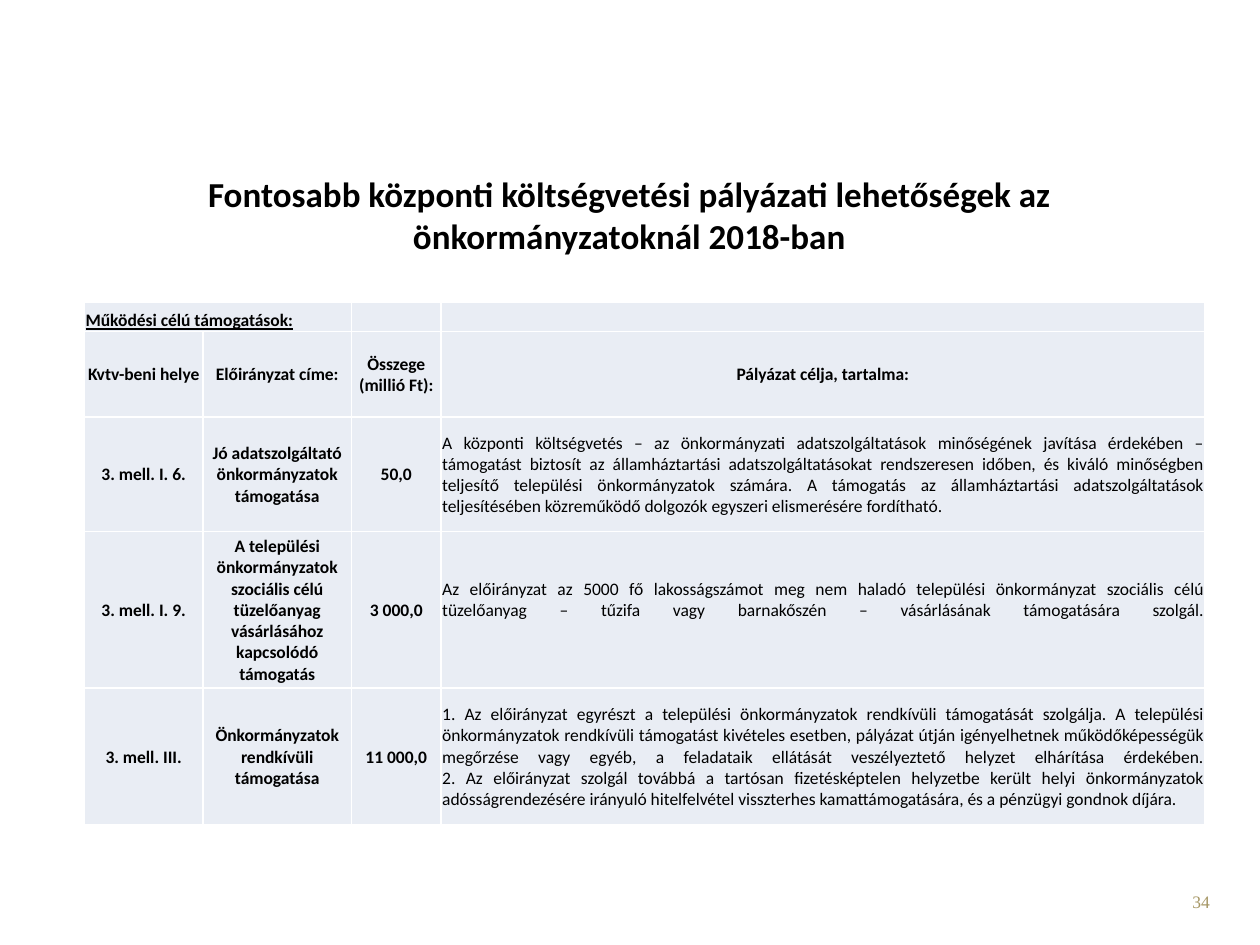
from copy import deepcopy
from typing import NamedTuple

from lxml.etree import SubElement
from pptx import Presentation
from pptx.dml.color import RGBColor
from pptx.enum.text import MSO_ANCHOR as Anchor, PP_ALIGN as Align
from pptx.oxml.ns import qn
from pptx.util import Inches, Pt

BLACK, WHITE, PALE_BLUE, GOLD = "000000", "FFFFFF", "E9EDF4", "A69765"
COLUMN_WIDTHS = [0.94, 1.18, 0.71, 6.06]
ROW_HEIGHTS = [0.23, 0.68, 0.91, 1.24, 1.09]


class Grant(NamedTuple):
    place: str
    title: str
    amount: str
    purpose: str


SECTION = "Működési célú támogatások:"
HEADINGS = Grant("Kvtv-beni helye", "Előirányzat címe:", "Összege (millió Ft):",
                 "Pályázat célja, tartalma:")
GRANTS = [
    Grant("3. mell. I. 6.", "Jó adatszolgáltató önkormányzatok támogatása", "50,0",
          "A központi költségvetés – az önkormányzati adatszolgáltatások minőségének "
          "javítása érdekében – támogatást biztosít az államháztartási "
          "adatszolgáltatásokat rendszeresen időben, és kiváló minőségben teljesítő "
          "települési önkormányzatok számára. A támogatás az államháztartási "
          "adatszolgáltatások teljesítésében közreműködő dolgozók egyszeri "
          "elismerésére fordítható."),
    # The closing line break stretches the last justified line
    Grant("3. mell. I. 9.",
          "A települési önkormányzatok szociális célú tüzelőanyag vásárlásához "
          "kapcsolódó támogatás", "3 000,0",
          "Az előirányzat az 5000 fő lakosságszámot meg nem haladó települési "
          "önkormányzat szociális célú tüzelőanyag – tűzifa vagy barnakőszén – "
          "vásárlásának támogatására szolgál.\n"),
    Grant("3. mell. III.", "Önkormányzatok rendkívüli támogatása", "11 000,0",
          "1. Az előirányzat egyrészt a települési önkormányzatok rendkívüli "
          "támogatását szolgálja. A települési önkormányzatok rendkívüli támogatást "
          "kivételes esetben, pályázat útján igényelhetnek működőképességük "
          "megőrzése vagy egyéb, a feladataik ellátását veszélyeztető helyzet "
          "elhárítása érdekében.\n"
          "2. Az előirányzat szolgál továbbá a tartósan fizetésképtelen helyzetbe "
          "került helyi önkormányzatok adósságrendezésére irányuló hitelfelvétel "
          "visszterhes kamattámogatására, és a pénzügyi gondnok díjára."),
]


def rgb(value: str) -> RGBColor:
    return RGBColor.from_string(value)


def write(frame, text: str, *, size: float = 10, font: str = "Calibri",
          color: str = BLACK, bold: bool = False, underline: bool = False,
          align=Align.LEFT) -> None:
    paragraph = frame.paragraphs[0]
    paragraph.text = text
    paragraph.alignment = align
    for run in paragraph.runs:
        run.font.size, run.font.name = Pt(size), font
        run.font.bold, run.font.underline = bold, underline
        run.font.color.rgb = rgb(color)
    # Line breaks and the paragraph end keep the same text height
    element = paragraph._p
    for line_break in element.findall(qn("a:br")):
        line_break.append(deepcopy(element.find(qn("a:r")).find(qn("a:rPr"))))
    end = SubElement(element, qn("a:endParaRPr"), sz=str(int(size * 100)))
    SubElement(end, qn("a:latin"), typeface=font)


def add_text(slide, left: float, top: float, width: float, height: float,
             text: str, **style) -> None:
    box = slide.shapes.add_textbox(Inches(left), Inches(top),
                                   Inches(width), Inches(height))
    box.text_frame.word_wrap = True
    write(box.text_frame, text, **style)


def style_cell(cell, anchor) -> None:
    cell.margin_left = cell.margin_top = cell.margin_right = Inches(0.01)
    cell.margin_bottom = 0
    cell.vertical_anchor = anchor
    properties = cell._tc.get_or_add_tcPr()
    for side in ("a:lnL", "a:lnR", "a:lnT", "a:lnB"):
        border = SubElement(properties, qn(side), w=str(Pt(1)))
        SubElement(SubElement(border, qn("a:solidFill")), qn("a:srgbClr"), val=WHITE)
    cell.fill.solid()
    cell.fill.fore_color.rgb = rgb(PALE_BLUE)


def add_grant_table(slide) -> None:
    table = slide.shapes.add_table(
        len(ROW_HEIGHTS), len(COLUMN_WIDTHS), Inches(0.67), Inches(2.4),
        Inches(sum(COLUMN_WIDTHS)), Inches(sum(ROW_HEIGHTS))).table
    for column, width in zip(table.columns, COLUMN_WIDTHS):
        column.width = Inches(width)
    for row, height in zip(table.rows, ROW_HEIGHTS):
        row.height = Inches(height)

    # Section row
    for index, cell in enumerate(table.rows[0].cells):
        style_cell(cell, Anchor.BOTTOM)
        write(cell.text_frame, "" if index else SECTION, bold=True, underline=True)
    table.cell(0, 0).merge(table.cell(0, 1))

    # Headings and grants: only the purposes are justified and not bold
    for row_index, grant in enumerate([HEADINGS, *GRANTS], start=1):
        for column_index, text in enumerate(grant):
            cell = table.cell(row_index, column_index)
            is_purpose = grant is not HEADINGS and text is grant.purpose
            style_cell(cell, Anchor.MIDDLE)
            write(cell.text_frame, text, bold=not is_purpose,
                  align=Align.JUSTIFY if is_purpose else Align.CENTER)


def main() -> None:
    presentation = Presentation()
    presentation.slide_width, presentation.slide_height = Inches(10), Inches(7.5)
    slide = presentation.slides.add_slide(presentation.slide_layouts[6])

    # Page number, title and table
    add_text(slide, 7.37, 7.02, 2.33, 0.4, "34", font="Times New Roman",
             color=GOLD, align=Align.RIGHT)
    add_text(slide, 0.43, 1.32, 9.13, 0.77,
             "Fontosabb központi költségvetési pályázati lehetőségek az "
             "önkormányzatoknál 2018-ban", size=20, bold=True, align=Align.CENTER)
    add_grant_table(slide)
    presentation.save("out.pptx")


if __name__ == "__main__":
    main()
